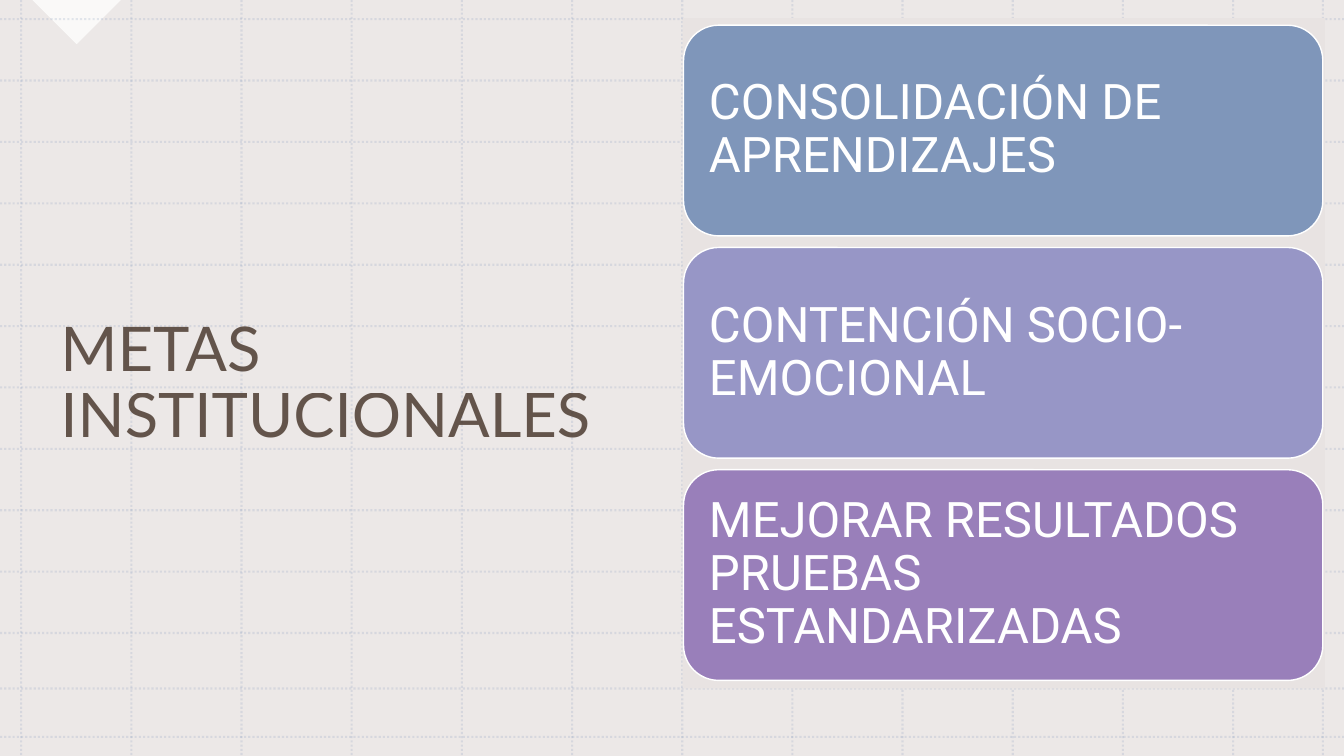
from pptx import Presentation
from pptx.dml.color import RGBColor
from pptx.enum.dml import MSO_LINE
from pptx.enum.shapes import MSO_CONNECTOR, MSO_SHAPE
from pptx.enum.text import MSO_ANCHOR, MSO_AUTO_SIZE, PP_ALIGN
from pptx.oxml.ns import qn
from pptx.util import Inches, Pt
from lxml import etree

STRAIGHT = MSO_CONNECTOR.STRAIGHT
DOTTED = MSO_LINE.ROUND_DOT
RECTANGLE = MSO_SHAPE.RECTANGLE
ROUNDED = MSO_SHAPE.ROUNDED_RECTANGLE
CORNER = MSO_SHAPE.RIGHT_TRIANGLE
MIDDLE = MSO_ANCHOR.MIDDLE
LEFT = PP_ALIGN.LEFT
NO_FIT = MSO_AUTO_SIZE.NONE

WIDTH, HEIGHT = 13.33, 7.5
TITLE_ONLY = 5
COLOURS = {
    "white": "FFFFFF",
    "sand": "E8E3E2",
    "brown": "413024",
    "blue": "7F96BA",
    "lavender": "9796C6",
    "purple": "997FBA",
}
GOALS = [
    ("CONSOLIDACIÓN DE APRENDIZAJES", "blue"),
    ("CONTENCIÓN SOCIO-EMOCIONAL", "lavender"),
    ("MEJORAR RESULTADOS PRUEBAS ESTANDARIZADAS", "purple"),
]


def colour(name):
    return RGBColor.from_string(COLOURS[name])


def set_opacity(element, percent):
    for value in element.iter(qn("a:srgbClr")):
        etree.SubElement(value, qn("a:alpha")).set("val", str(percent * 1000))


def add_panel(page, kind, left, top, width, height, fill, opacity=100):
    panel = page.shapes.add_shape(
        kind, Inches(left), Inches(top), Inches(width), Inches(height))
    panel.shadow.inherit = False
    panel.fill.solid()
    panel.fill.fore_color.rgb = colour(fill)
    panel.line.fill.background()
    if opacity < 100:
        set_opacity(panel.element, opacity)
    return panel


def add_grid_line(page, x1, y1, x2, y2):
    rule = page.shapes.add_connector(
        STRAIGHT, Inches(x1), Inches(y1), Inches(x2), Inches(y2))
    rule.line.color.rgb = colour("blue")
    rule.line.width = Pt(1.5)
    rule.line.dash_style = DOTTED
    set_opacity(rule.element, 20)
    etree.SubElement(rule.element.spPr, qn("a:effectLst"))


def add_grid(page):
    columns = [0.21 + (12.23 - 0.21) / 11 * i for i in range(12)] + [13.12]
    rows = [0.19 + (6.28 - 0.19) / 10 * i for i in range(11)] + [6.83, 7.31]
    for x in columns:
        add_grid_line(page, x, 0, x, HEIGHT)
    for y in rows:
        add_grid_line(page, 0, y, WIDTH, y)


def write_text(box, text, font, size, fill):
    frame = box.text_frame
    frame.word_wrap = True
    frame.auto_size = NO_FIT
    frame.vertical_anchor = MIDDLE
    para = frame.paragraphs[0]
    para.alignment = LEFT
    para.line_spacing = 0.9
    span = para.add_run()
    span.text = text
    span.font.name = font
    span.font.size = Pt(size)
    span.font.color.rgb = colour(fill)


def place_title(page, text):
    title = page.shapes.title
    title.left, title.top = Inches(0.5), Inches(0.79)
    title.width, title.height = Inches(6.07), Inches(6.05)
    write_text(title, text, "Lato", 44, "brown")
    set_opacity(title.element, 80)
    title.element.getparent().append(title.element)


def add_goal(page, top, text, fill):
    card = add_panel(page, ROUNDED, 6.78, top, 6.34, 2.09, fill)
    card.line.color.rgb = colour("white")
    card.line.width = Pt(1)
    frame = card.text_frame
    frame.margin_left = frame.margin_right = Inches(0.15)
    frame.margin_top = frame.margin_bottom = Inches(0.15)
    write_text(card, text, "Roboto", 35, "white")


def main():
    deck = Presentation()
    deck.slide_width, deck.slide_height = Inches(WIDTH), Inches(HEIGHT)
    page = deck.slides.add_slide(deck.slide_layouts[TITLE_ONLY])
    page.background.fill.solid()
    page.background.fill.fore_color.rgb = colour("white")

    add_panel(page, RECTANGLE, 0, 0, WIDTH, HEIGHT, "sand", 80)
    notch = add_panel(page, CORNER, 0.45, -0.31, 0.62, 0.62, "white", 75)
    notch.rotation = 315
    add_grid(page)
    place_title(page, "METAS INSTITUCIONALES")
    add_panel(page, RECTANGLE, 6.77, 0.18, 6.37, 6.65, "sand")
    for i, (text, fill) in enumerate(GOALS):
        add_goal(page, 0.25 + 2.205 * i, text, fill)

    deck.save("out.pptx")


if __name__ == "__main__":
    main()
